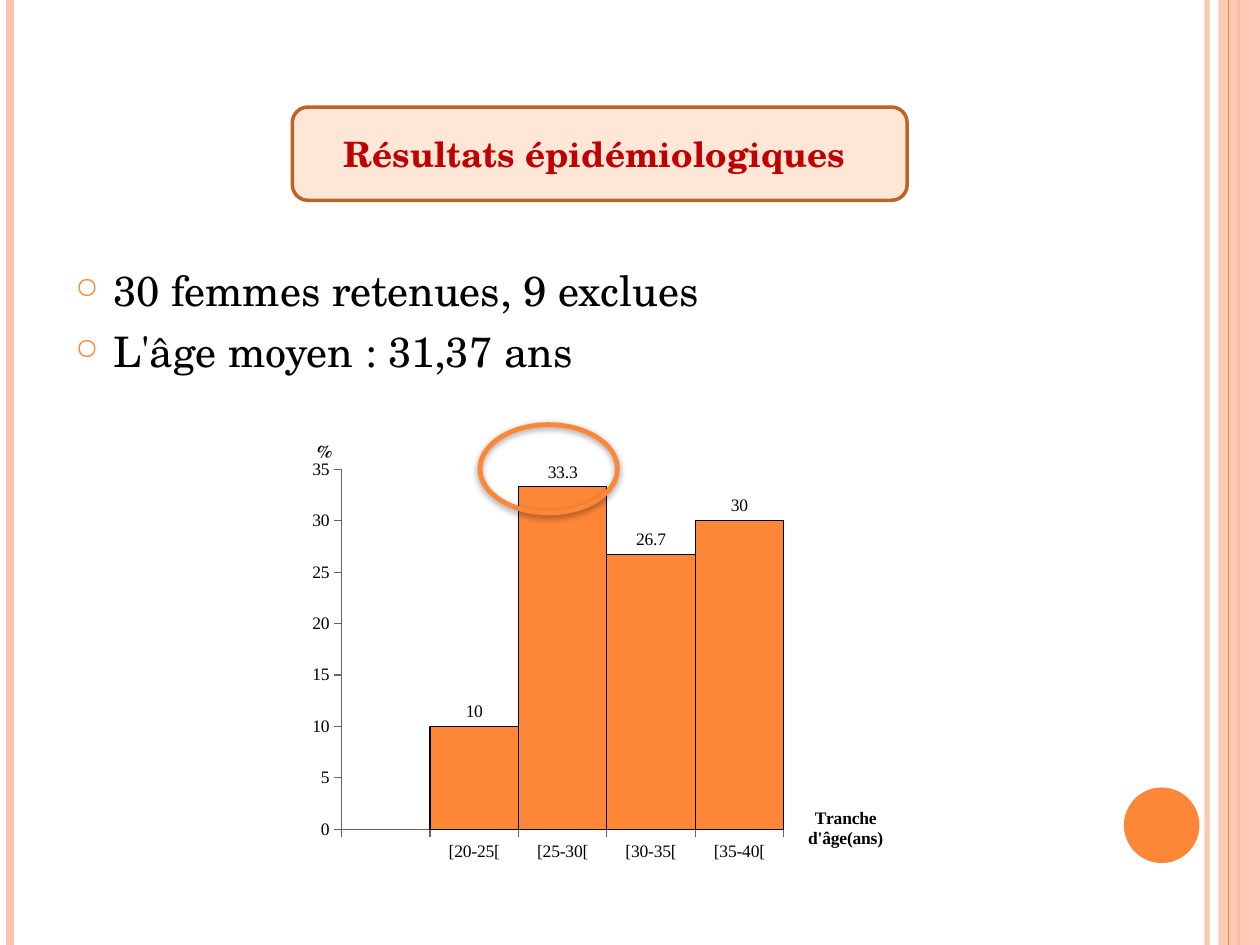
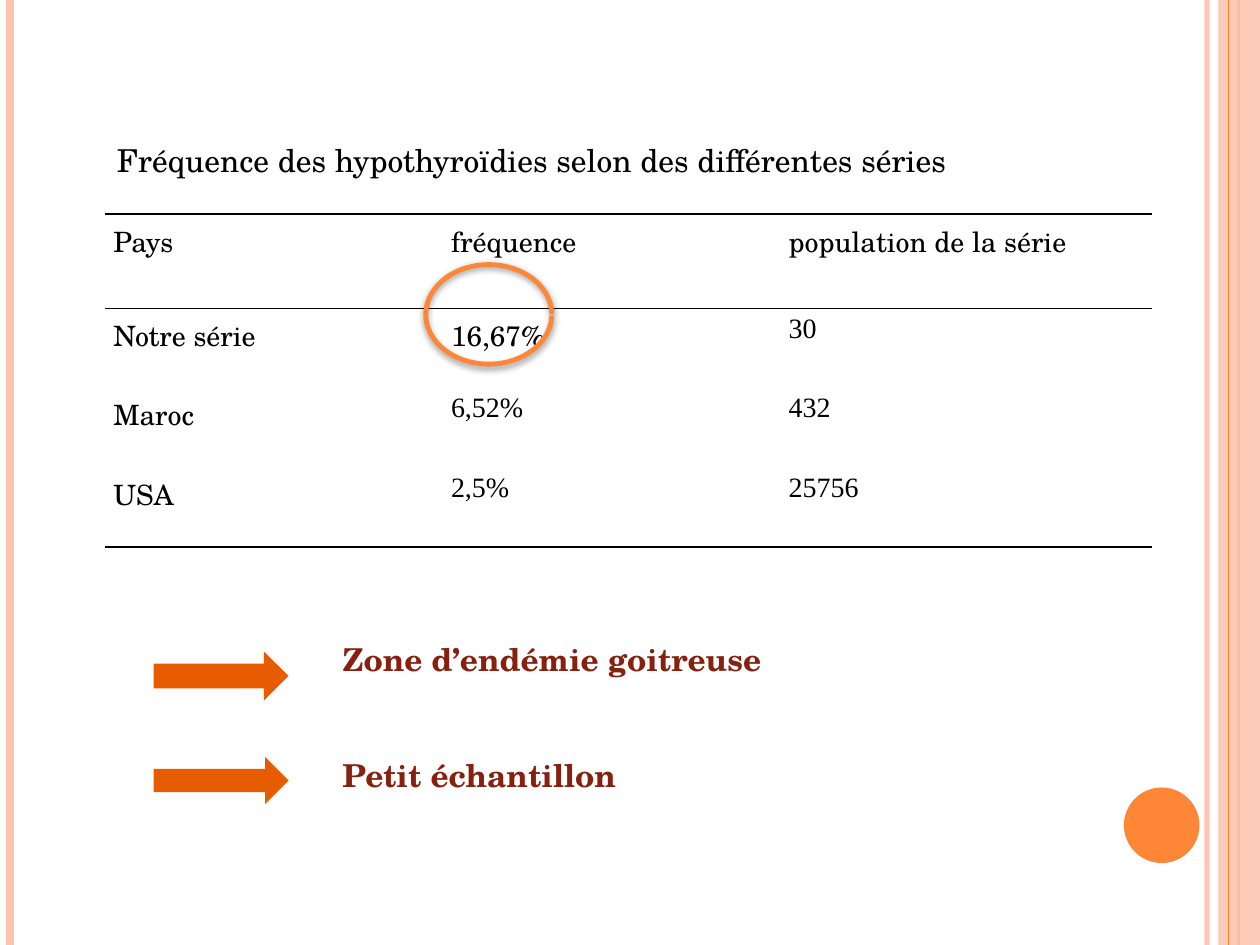
from dataclasses import dataclass
from typing import Any

from lxml import etree
from pptx import Presentation
from pptx import util as u
from pptx.chart.data import CategoryChartData
from pptx.dml.color import RGBColor
from pptx.enum import chart as ch, shapes as sh, text as tx
from pptx.oxml import ns

# Shared look: 100 px to the inch
PX = 9144
WIDE, HIGH = 1000, 750
SERIF, TIMES = "TeX Gyre Schola", "Times New Roman"
ORANGE, PINK, BLACK = "FE8637", "FEC3AE", "000000"
RUST, RED, BRICK = "E75C01", "C00000", "862110"
CREAM, BROWN, GREY = "FFE7D7", "BC6329", "666666"


@dataclass(frozen=True)
class Box:
    left: int
    top: int
    width: int
    height: int

    def emu(self) -> list[u.Emu]:
        return [px(n) for n in (self.left, self.top, self.width, self.height)]


@dataclass(frozen=True)
class Band:
    x: int
    color: str
    width: float
    alpha: int = 100


@dataclass(frozen=True)
class Ring:
    box: Box
    start: float
    end: float
    turn: int = 0


@dataclass(frozen=True)
class Note:
    box: Box
    text: str
    color: str = BLACK
    bold: bool = False


BANDS = (Band(958, PINK, 3, 93), Band(8, PINK, 4.5), Band(983, ORANGE, 1.5))
EDGE = Band(975, ORANGE, 0.75)


# Basic helpers
def px(n: int) -> u.Emu:
    return u.Emu(n * PX)


def rgb(code: str) -> RGBColor:
    return RGBColor.from_string(code)


def sub(parent: Any, tag: str, **attrs: Any) -> Any:
    return etree.SubElement(parent, ns.qn(tag), {k: str(v) for k, v in attrs.items()})


def paint(fill: Any, color: str, alpha: int = 100) -> None:
    fill.solid()
    fill.fore_color.rgb = rgb(color)
    if alpha < 100:
        node = fill._xPr.find(f"{ns.qn('a:solidFill')}/{ns.qn('a:srgbClr')}")
        sub(node, "a:alpha", val=alpha * 1000)


def style(font: Any, size: float, face: str, color: str = BLACK, bold: bool = False) -> None:
    font.size, font.name, font.bold = u.Pt(size), face, bold
    font.color.rgb = rgb(color)


def write(frame: Any, text: str, *, size: float = 18, face: str = SERIF,
          color: str = BLACK, bold: bool = False, align: Any = None,
          space: float | None = None, after: float | None = None) -> None:
    for i, part in enumerate(text.split("\n")):
        para = frame.add_paragraph() if i else frame.paragraphs[0]
        para.alignment, para.line_spacing = align, space
        if after is not None:
            para.space_after = u.Pt(after)
        run = para.add_run()
        run.text = part
        style(run.font, size, face, color, bold)


def shape(slide: Any, kind: Any, box: Box, fill: str | None = None, alpha: int = 100,
          line: str | None = None, width: float = 1) -> Any:
    item = slide.shapes.add_shape(kind, *box.emu())
    item.shadow.inherit = False
    if fill:
        paint(item.fill, fill, alpha)
    else:
        item.fill.background()
    if line:
        paint(item.line.fill, line)
        item.line.width = u.Pt(width)
    else:
        item.line.fill.background()
    return item


def note(slide: Any, item: Note, **fmt: Any) -> Any:
    frame = slide.shapes.add_textbox(*item.box.emu()).text_frame
    frame.word_wrap = True
    write(frame, item.text, color=item.color, bold=item.bold, **fmt)
    return frame


def ring(slide: Any, item: Ring) -> None:
    arc = shape(slide, sh.MSO_SHAPE.ARC, item.box, line=ORANGE, width=2.75)
    for i, angle in enumerate((item.start, item.end)):
        arc.adjustments[i] = angle * 0.6
    arc.rotation = item.turn
    glow = sub(arc._element.spPr.find(ns.qn("a:effectLst")), "a:outerShdw",
               blurRad=u.Pt(4), dist=u.Pt(1.6), dir=5400000, rotWithShape=0)
    sub(sub(glow, "a:srgbClr", val=BLACK), "a:alpha", val=42000)


# Frame shared by both slides
def rule(slide: Any, band: Band) -> None:
    x = px(band.x)
    line = slide.shapes.add_connector(sh.MSO_CONNECTOR.STRAIGHT, x, 0, x, px(HIGH))
    paint(line.line.fill, band.color, band.alpha)
    line.line.width = u.Pt(band.width)
    sub(line._element.spPr, "a:effectLst")


def start(deck: Any) -> Any:
    slide = deck.slides.add_slide(deck.slide_layouts[6])
    for band in BANDS:
        rule(slide, band)
    shape(slide, sh.MSO_SHAPE.RECTANGLE, Box(967, 0, 33, HIGH), PINK, 87)
    rule(slide, EDGE)
    shape(slide, sh.MSO_SHAPE.OVAL, Box(892, 625, 60, 60), ORANGE)
    return slide


# Chart of ages
def place(node: Any, **spots: float) -> None:
    for old in node.findall(ns.qn("c:layout")):
        node.remove(old)
    lay = etree.Element(ns.qn("c:layout"))
    node.insert(0 if node.find(ns.qn("c:tx")) is None else 1, lay)
    man = sub(lay, "c:manualLayout")
    if "w" in spots:
        sub(man, "c:layoutTarget", val="inner")
    for key in ("x", "y"):
        sub(man, f"c:{key}Mode", val="edge")
    for key, spot in spots.items():
        sub(man, f"c:{key}", val=spot)


def label(axis: Any, text: str, face: str, x: float, y: float) -> None:
    axis.has_title = True
    title = axis.axis_title
    write(title.text_frame, text, size=10, face=face, bold=True)
    title.text_frame._txBody.find(ns.qn("a:bodyPr")).set("rot", "0")
    place(title._element, x=x, y=y)


def ages(slide: Any, box: Box) -> None:
    data = CategoryChartData()
    data.categories = ["", "[20-25[", "[25-30[", "[30-35[", "[35-40["]
    data.add_series("Series 1", [None, 10, 33.3, 26.7, 30])
    chart = slide.shapes.add_chart(ch.XL_CHART_TYPE.COLUMN_CLUSTERED, *box.emu(), data).chart
    chart.has_title = chart.has_legend = False
    style(chart.font, 10, SERIF)

    plot = chart.plots[0]
    plot.gap_width, plot.vary_by_categories = 0, False
    bars = plot.series[0].format
    paint(bars.fill, ORANGE)
    paint(bars.line.fill, BLACK)
    bars.line.width = u.Pt(0.75)
    plot.has_data_labels = True
    tags = plot.data_labels
    tags.show_value, tags.position = True, ch.XL_LABEL_POSITION.OUTSIDE_END
    style(tags.font, 10, TIMES)

    cats, vals = chart.category_axis, chart.value_axis
    for axis in (cats, vals):
        axis.has_major_gridlines = False
        axis.major_tick_mark = ch.XL_TICK_MARK.OUTSIDE
        paint(axis.format.line.fill, GREY)
        style(axis.tick_labels.font, 10, TIMES)
    vals.minimum_scale, vals.maximum_scale, vals.major_unit = 0, 35, 5
    label(cats, "Tranche\nd'âge(ans)", TIMES, 0.8, 0.82)
    label(vals, "%", SERIF, 0.09, 0)
    place(chart.element.find(f".//{ns.qn('c:plotArea')}"), x=0.13, y=0.08, w=0.64, h=0.8)


# Table of countries
ROWS = (
    ("Pays", "fréquence", "population de la série"),
    ("Notre série", "16,67%", "30"),
    ("Maroc", "6,52%", "432"),
    ("USA", "2,5%", "25756"),
)


def border(cell: Any, sides: str) -> None:
    props = cell._tc.get_or_add_tcPr()
    for i, side in enumerate("LRTB"):
        line = etree.Element(ns.qn(f"a:ln{side}"), {"w": str(u.Pt(1))})
        if side in sides:
            sub(sub(line, "a:solidFill"), "a:srgbClr", val=BLACK)
        else:
            sub(line, "a:noFill")
        props.insert(i, line)


def series(slide: Any, box: Box) -> None:
    grid = slide.shapes.add_table(len(ROWS), len(ROWS[0]), *box.emu()).table
    grid.first_row = grid.horz_banding = False
    for col, width in zip(grid.columns, (268, 268, 295)):
        col.width = px(width)
    for r, words in enumerate(ROWS):
        grid.rows[r].height = px(63 if r else 75)
        sides = ("T" if r < 2 else "") + ("B" if r in (0, len(ROWS) - 1) else "")
        for c, word in enumerate(words):
            cell = grid.cell(r, c)
            cell.margin_left = cell.margin_right = px(7)
            cell.margin_top = cell.margin_bottom = 0
            cell.fill.background()
            border(cell, sides)
            plain = c == 2 and r > 0 or c == 1 and r > 1
            write(cell.text_frame, word, size=16, face=TIMES if plain else SERIF, space=1.15)


# Slides
def results(deck: Any) -> None:
    slide = start(deck)
    frame = note(slide, Note(Box(50, 205, 817, 105),
                             "30 femmes retenues, 9 exclues\nL'âge moyen : 31,37 ans"),
                 size=24, after=6)
    for para in frame.paragraphs:
        props = para._p.get_or_add_pPr()
        props.set("marL", str(px(30)))
        props.set("indent", str(px(-30)))
        sub(sub(props, "a:buClr"), "a:srgbClr", val=ORANGE)
        sub(props, "a:buSzPct", val=70000)
        sub(props, "a:buChar", char="○")
    head = shape(slide, sh.MSO_SHAPE.ROUNDED_RECTANGLE, Box(232, 85, 488, 74),
                 CREAM, line=BROWN, width=2)
    head.text_frame.vertical_anchor = tx.MSO_ANCHOR.MIDDLE
    write(head.text_frame, "Résultats épidémiologiques ", size=20, color=RED, bold=True,
          align=tx.PP_ALIGN.CENTER)
    ages(slide, Box(200, 344, 548, 357))
    ring(slide, Ring(Box(381, 337, 109, 70), 162, 161.59, 180))


def compare(deck: Any) -> None:
    slide = start(deck)
    series(slide, Box(83, 170, 831, 264))
    ring(slide, Ring(Box(338, 210, 100, 79), 1.07, 0))
    for box in (Box(122, 517, 107, 39), Box(122, 601, 107, 37)):
        shape(slide, sh.MSO_SHAPE.RIGHT_ARROW, box, RUST)
    for item in (
        Note(Box(262, 503, 559, 40), "Zone d’endémie goitreuse", BRICK, True),
        Note(Box(262, 595, 507, 40), "Petit échantillon", BRICK, True),
        Note(Box(83, 107, 709, 40), "Fréquence des hypothyroïdies selon des différentes séries"),
    ):
        note(slide, item)


def main() -> None:
    deck = Presentation()
    deck.slide_width, deck.slide_height = px(WIDE), px(HIGH)
    results(deck)
    compare(deck)
    deck.save("out.pptx")


if __name__ == "__main__":
    main()
